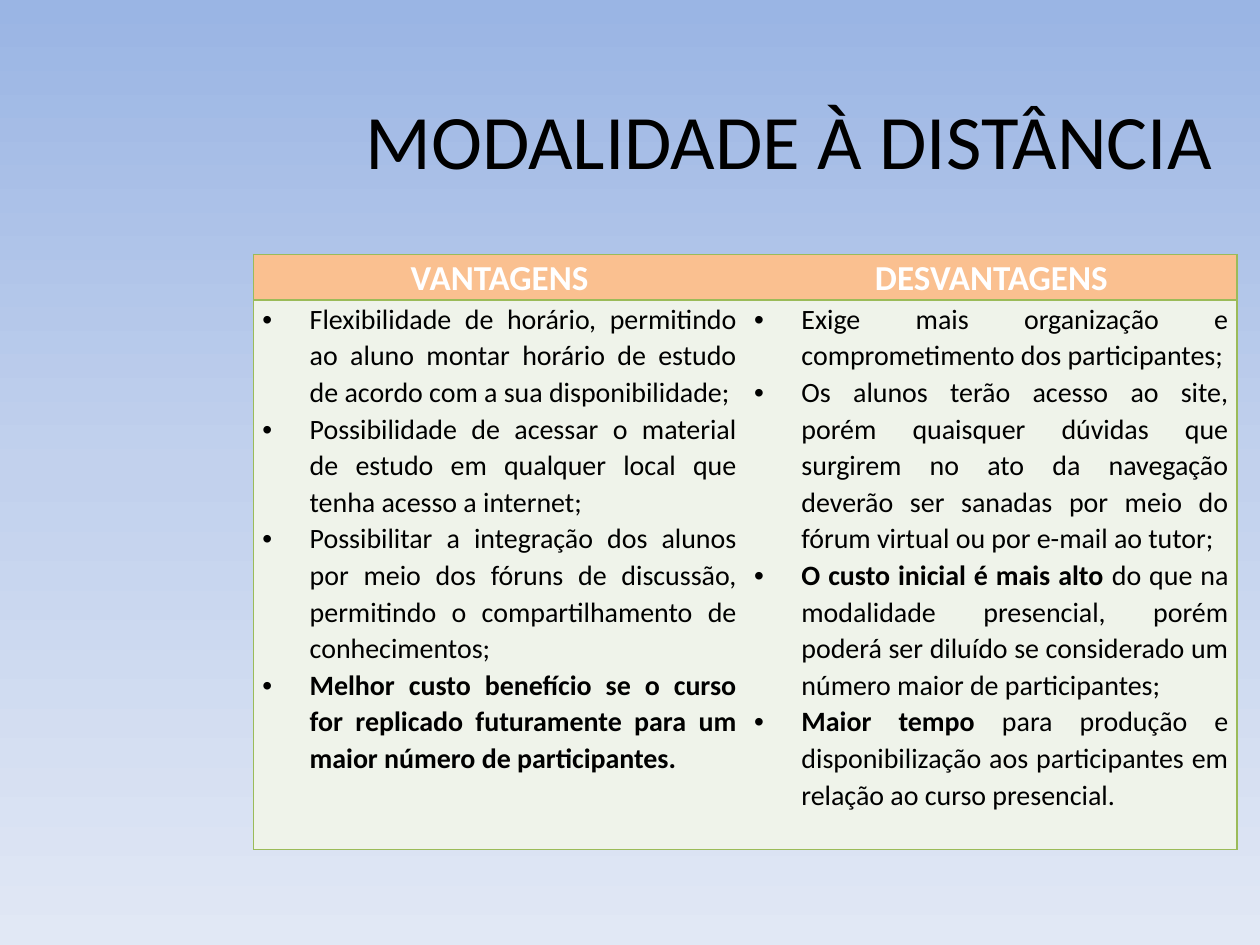
from copy import deepcopy

from lxml.etree import SubElement
from pptx import Presentation
from pptx.dml.color import RGBColor
from pptx.enum.text import MSO_ANCHOR as Anchor, PP_ALIGN as Align
from pptx.oxml import parse_xml
from pptx.oxml.ns import nsdecls, qn
from pptx.util import Pt

BLACK = RGBColor(0x00, 0x00, 0x00)
WHITE = RGBColor(0xFF, 0xFF, 0xFF)
ORANGE = RGBColor(0xFA, 0xC0, 0x90)
PALE = RGBColor(0xEF, 0xF3, 0xEA)
GREEN = RGBColor(0x9B, 0xBB, 0x59)
SKY = [
    (0, RGBColor(0x9A, 0xB5, 0xE4)),
    (0.5, RGBColor(0xC2, 0xD1, 0xED)),
    (1, RGBColor(0xE1, 0xE8, 0xF5)),
]
FONT = "Calibri"
INDENT = Pt(27)

# Each column: heading, then items made of (text, bold) spans
COLUMNS = [
    ("VANTAGENS", [
        [("Flexibilidade de horário, permitindo ao aluno montar horário de "
          "estudo de acordo com a sua disponibilidade;", False)],
        [("Possibilidade de acessar o material de estudo em qualquer local "
          "que tenha acesso a internet;", False)],
        [("Possibilitar a integração dos alunos por meio dos fóruns de "
          "discussão, permitindo o compartilhamento de conhecimentos;", False)],
        [("Melhor custo benefício se o curso for replicado futuramente para "
          "um maior número de participantes.", True)],
    ]),
    ("DESVANTAGENS", [
        [("Exige mais organização e comprometimento dos participantes;", False)],
        [("Os alunos terão acesso ao site, porém quaisquer dúvidas que "
          "surgirem no ato da navegação deverão ser sanadas por meio do "
          "fórum virtual ou por e-mail ao tutor;", False)],
        [("O custo inicial é mais alto ", True),
         ("do que na modalidade presencial, porém poderá ser diluído se "
          "considerado um número maior de participantes;", False)],
        [("Maior tempo ", True),
         ("para produção e disponibilização aos participantes em relação "
          "ao curso presencial.", False)],
    ]),
]


def paint_background(page):
    fill = page.background.fill
    fill.gradient()
    fill.gradient_angle = 270
    stops = page.background.fill.gradient_stops
    stop_list = next(page.element.iter(qn("a:gsLst")))
    stop_list.append(deepcopy(stop_list[-1]))
    stops = fill.gradient_stops
    for stop, (position, color) in zip(stops, SKY):
        stop.position = position
        stop.color.rgb = color


def add_span(para, text, *, size, color=BLACK, bold=False):
    span = para.add_run()
    span.text = text
    font = span.font
    font.name, font.size, font.bold = FONT, Pt(size), bold
    font.color.rgb = color


def add_bullet(para):
    props = para._p.get_or_add_pPr()
    props.set("marL", str(INDENT))
    props.set("indent", str(-INDENT))
    SubElement(props, qn("a:buFont"), typeface="Arial")
    SubElement(props, qn("a:buChar"), char="•")


def format_cell(cell, fill, sides):
    cell.margin_left = cell.margin_right = Pt(5)
    cell.margin_top = cell.margin_bottom = 0
    cell.fill.solid()
    cell.fill.fore_color.rgb = fill
    props = cell._tc.get_or_add_tcPr()
    for index, side in enumerate("LRTB"):
        paint = "<a:noFill/>"
        if side in sides:
            paint = f'<a:solidFill><a:srgbClr val="{GREEN}"/></a:solidFill>'
        props.insert(index, parse_xml(
            f'<a:ln{side} {nsdecls("a")} w="{Pt(1)}">{paint}</a:ln{side}>'))


def add_title(page, text):
    box = page.shapes.add_textbox(Pt(145), Pt(21), Pt(612), Pt(116))
    frame = box.text_frame
    frame.word_wrap = True
    frame.vertical_anchor = Anchor.MIDDLE
    para = frame.paragraphs[0]
    para.alignment = Align.CENTER
    add_span(para, text, size=44)


def add_comparison(page):
    frame = page.shapes.add_table(2, 2, Pt(145), Pt(145.5), Pt(562), Pt(340))
    table = frame.table
    table.first_row = table.horz_banding = False
    table.rows[0].height, table.rows[1].height = Pt(26), Pt(314)

    for index, (heading, items) in enumerate(COLUMNS):
        table.columns[index].width = Pt(281)
        sides = "LTB" if index == 0 else "RTB"

        # Heading
        cell = table.cell(0, index)
        format_cell(cell, ORANGE, sides)
        para = cell.text_frame.paragraphs[0]
        para.alignment = Align.CENTER
        para.line_spacing = 1.07
        add_span(para, heading, size=20, color=WHITE, bold=True)

        # Bulleted items
        cell = table.cell(1, index)
        format_cell(cell, PALE, sides)
        body = cell.text_frame
        for number, spans in enumerate(items):
            para = body.add_paragraph() if number else body.paragraphs[0]
            add_bullet(para)
            para.alignment = Align.JUSTIFY
            para.line_spacing = 1.07
            for text, bold in spans:
                add_span(para, text, size=16, bold=bold)


def main():
    deck = Presentation()
    deck.slide_width, deck.slide_height = Pt(720), Pt(540)
    page = deck.slides.add_slide(deck.slide_layouts[6])
    paint_background(page)
    add_title(page, "MODALIDADE À DISTÂNCIA")
    add_comparison(page)
    deck.save("out.pptx")


if __name__ == "__main__":
    main()
